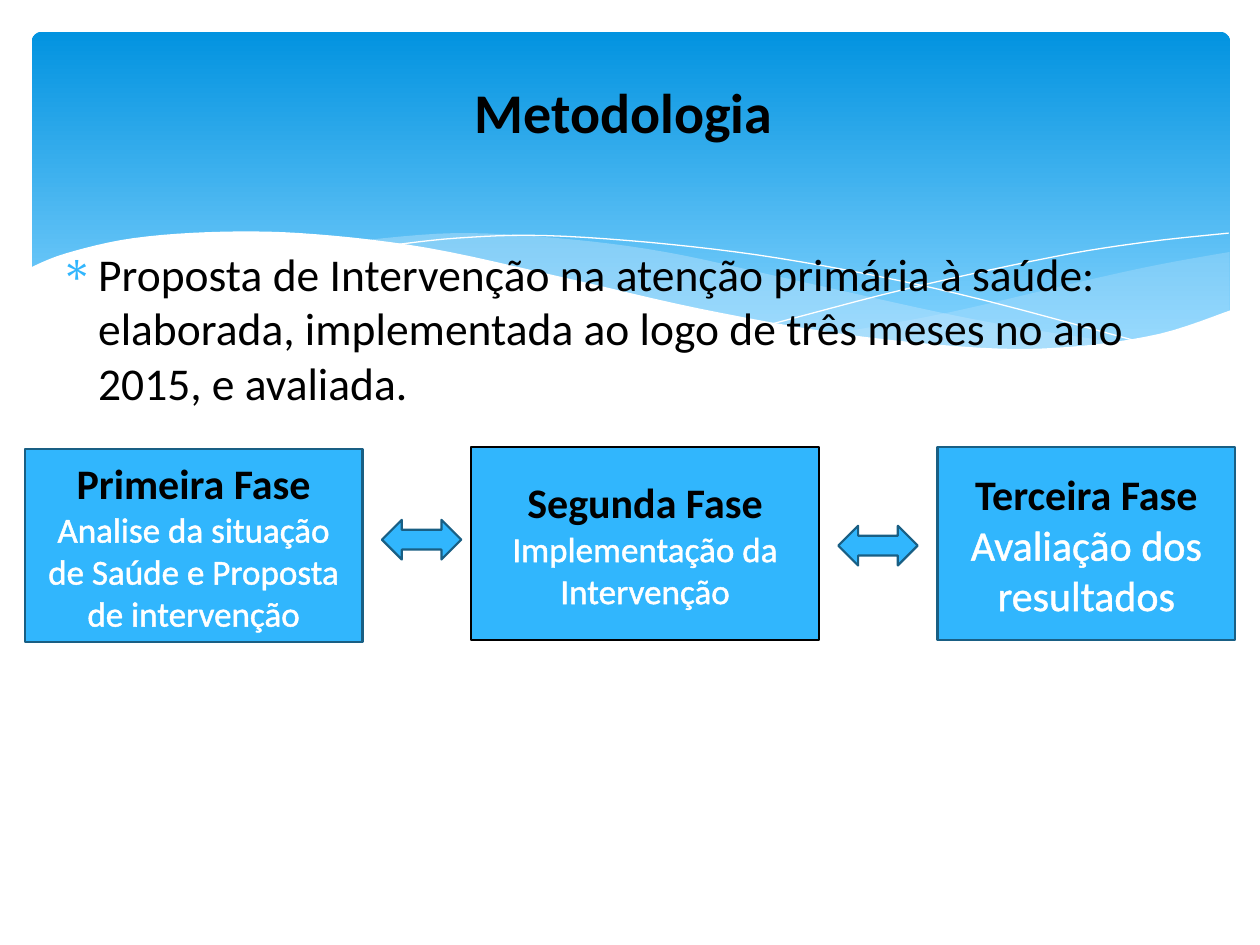
from dataclasses import dataclass
from typing import Optional

from lxml.etree import SubElement
from pptx import Presentation
from pptx.dml.color import RGBColor as Rgb
from pptx.enum.shapes import MSO_SHAPE as Kind
from pptx.enum.text import MSO_ANCHOR as Anchor, PP_ALIGN as Align
from pptx.oxml import parse_xml
from pptx.oxml.ns import nsdecls, qn
from pptx.util import Cm, Pt

HUES = {
    "deep": "0293E0", "light": "83D3FE", "mist": "C6E7FC", "white": "FFFFFF",
    "black": "000000", "sky": "31B6FD", "edge": "195F84",
}
FONT = "Calibri"
STEPS = 6


@dataclass
class Wave:
    curves: tuple
    fill: Optional[str] = None
    alpha: int = 100


@dataclass
class Phase:
    left: float
    top: float
    width: float
    head: str
    body: str
    size: int = 20
    edge: str = "edge"


@dataclass
class Arrow:
    left: float
    top: float


WAVES = (
    Wave((((24.79, 5.08), (23.39, 5.33), (21.87, 5.66), (19.13, 6.3),
           (16.79, 6.73)),
          ((16.79, 6.73), (18.26, 6.91), (20.4, 7.06), (22.15, 6.96),
           (23.57, 6.68), (24.79, 6.27))), "mist", 29),
    Wave((((22.68, 6.93), (19.69, 6.45), (15.98, 5.64), (13.41, 5.08),
           (11.23, 4.8), (9.17, 4.7), (7.26, 4.85)),
          ((7.26, 4.85), (9.19, 5.16), (11.4, 5.64), (14.38, 6.3),
           (17.27, 6.81), (19.94, 7.06), (22.68, 6.93))), "mist", 40),
    Wave((((7.85, 4.95), (9.22, 4.8), (11, 4.75), (13.54, 4.93),
           (16.15, 5.28), (19.3, 5.92), (23.04, 6.91)),)),
    Wave((((15.57, 6.53), (18.29, 5.82), (21.23, 5.18), (23.11, 4.88),
           (24.77, 4.7)),)),
    Wave((((24.82, 6.25), (23.37, 6.73), (21.59, 6.99), (19.76, 7.01),
           (16.97, 6.73), (14.1, 6.22), (11.35, 5.59), (8.64, 5),
           (6.35, 4.72), (4.5, 4.67), (2.69, 4.8), (1.32, 5.11),
           (0.58, 5.41)),
          ((0.58, 8.36), (24.82, 8.36))), "white"),
)

PHASES = (
    Phase(0.5, 9.05, 6.81, "Primeira Fase",
          "Analise da situação de Saúde e Proposta de intervenção"),
    Phase(9.5, 9.02, 7.01, "Segunda Fase", "Implementação da Intervenção",
          edge="black"),
    Phase(18.9, 9.02, 6, "Terceira Fase", "Avaliação dos resultados", 24),
)

ARROWS = (Arrow(7.7, 10.48), Arrow(16.9, 10.6))


def hue(name: str) -> Rgb:
    return Rgb.from_string(HUES[name])


def paint(shape, fill: str, edge: Optional[str] = None) -> None:
    shape.shadow.inherit = False
    shape.fill.solid()
    shape.fill.fore_color.rgb = hue(fill)
    if edge:
        shape.line.color.rgb = hue(edge)
        shape.line.width = Pt(1.25)
    else:
        shape.line.fill.background()


def style(para, size: int, color: str, bold: bool = False) -> None:
    for run in para.runs:
        run.font.name = FONT
        run.font.size = Pt(size)
        run.font.bold = bold
        run.font.color.rgb = hue(color)


def smooth(knots: tuple) -> list:
    ends = (knots[0], *knots, knots[-1])
    spots = [knots[0]]
    for a, b, c, d in zip(ends, ends[1:], ends[2:], ends[3:]):
        for step in range(1, STEPS + 1):
            t = step / STEPS
            spots.append(tuple(
                (2 * q + (r - p) * t + (2 * p - 5 * q + 4 * r - s) * t ** 2
                 + (3 * q - p - 3 * r + s) * t ** 3) / 2
                for p, q, r, s in zip(a, b, c, d)))
    return spots


def draw_panel(shapes) -> None:
    panel = shapes.add_shape(Kind.ROUNDED_RECTANGLE, Cm(0.64), Cm(0.64),
                             Cm(24.16), Cm(6.86))
    panel.adjustments[0] = 0.03
    paint(panel, "deep")
    panel.fill.gradient()
    panel.fill.gradient_angle = 270
    stops = panel.fill.gradient_stops
    for stop, spot, name in zip(stops, (0, 0.9), ("deep", "light")):
        stop.position = spot
        stop.color.rgb = hue(name)


def draw_wave(shapes, wave: Wave) -> None:
    spots = [(Cm(x), Cm(y)) for curve in wave.curves
             for x, y in smooth(curve)]
    path = shapes.build_freeform(*spots[0])
    path.add_line_segments(spots[1:], close=wave.fill is not None)
    shape = path.convert_to_shape()
    if wave.fill:
        paint(shape, wave.fill)
        if wave.alpha < 100:
            tint = shape.fill._xPr.find(qn("a:solidFill"))[0]
            SubElement(tint, qn("a:alpha"), val=str(wave.alpha * 1000))
    else:
        shape.shadow.inherit = False
        shape.fill.background()
        shape.line.color.rgb = hue("white")
        shape.line.width = Pt(0)


def add_text(shapes, box: tuple, text: str, size: int, bold: bool = False):
    frame = shapes.add_textbox(*map(Cm, box)).text_frame
    frame.word_wrap = True
    frame.text = text
    para = frame.paragraphs[0]
    style(para, size, "black", bold)
    return frame, para


def add_mark(para) -> None:
    props = para._p.get_or_add_pPr()
    props.set("marL", str(Cm(0.76)))
    props.set("indent", str(-Cm(0.76)))
    space = nsdecls("a")
    for xml in (
        f'<a:spcBef {space}><a:spcPct val="20000"/></a:spcBef>',
        f'<a:buClr {space}><a:srgbClr val="{HUES["sky"]}"/></a:buClr>',
        f'<a:buFont {space} typeface="Symbol"/>',
        f'<a:buChar {space} char="∗"/>',
    ):
        props.append(parse_xml(xml))


def draw_phase(shapes, phase: Phase) -> None:
    box = shapes.add_shape(Kind.RECTANGLE, Cm(phase.left), Cm(phase.top),
                           Cm(phase.width), Cm(3.89))
    paint(box, "sky", phase.edge)
    frame = box.text_frame
    frame.word_wrap = True
    frame.vertical_anchor = Anchor.MIDDLE
    frame.text = f"{phase.head}\n{phase.body}"
    head, body = frame.paragraphs
    head.alignment = body.alignment = Align.CENTER
    style(head, 24, "black", True)
    style(body, phase.size, "white")
    body.runs[0].font._element.insert(0, parse_xml(
        f'<a:ln {nsdecls("a")} w="{Pt(1.45)}"><a:solidFill>'
        f'<a:srgbClr val="{HUES["white"]}"/></a:solidFill></a:ln>'))


def draw_arrow(shapes, arrow: Arrow) -> None:
    shape = shapes.add_shape(Kind.LEFT_RIGHT_ARROW, Cm(arrow.left),
                             Cm(arrow.top), Cm(1.6), Cm(0.8))
    paint(shape, "sky", "edge")


def main() -> None:
    deck = Presentation()
    deck.slide_width, deck.slide_height = Cm(25.4), Cm(19.05)
    shapes = deck.slides.add_slide(deck.slide_layouts[6]).shapes
    draw_panel(shapes)
    for wave in WAVES:
        draw_wave(shapes, wave)
    _, para = add_text(
        shapes, (0.97, 4.83, 23.6, 3.61),
        "Proposta de Intervenção na atenção primária à saúde: elaborada, "
        "implementada ao logo de três meses no ano 2015, e avaliada.", 26)
    add_mark(para)
    frame, para = add_text(shapes, (1.27, 0.94, 22.86, 2.59),
                           "Metodologia ", 32, True)
    frame.vertical_anchor = Anchor.MIDDLE
    para.alignment = Align.CENTER
    for phase in PHASES:
        draw_phase(shapes, phase)
    for arrow in ARROWS:
        draw_arrow(shapes, arrow)
    deck.save("out.pptx")


if __name__ == "__main__":
    main()
